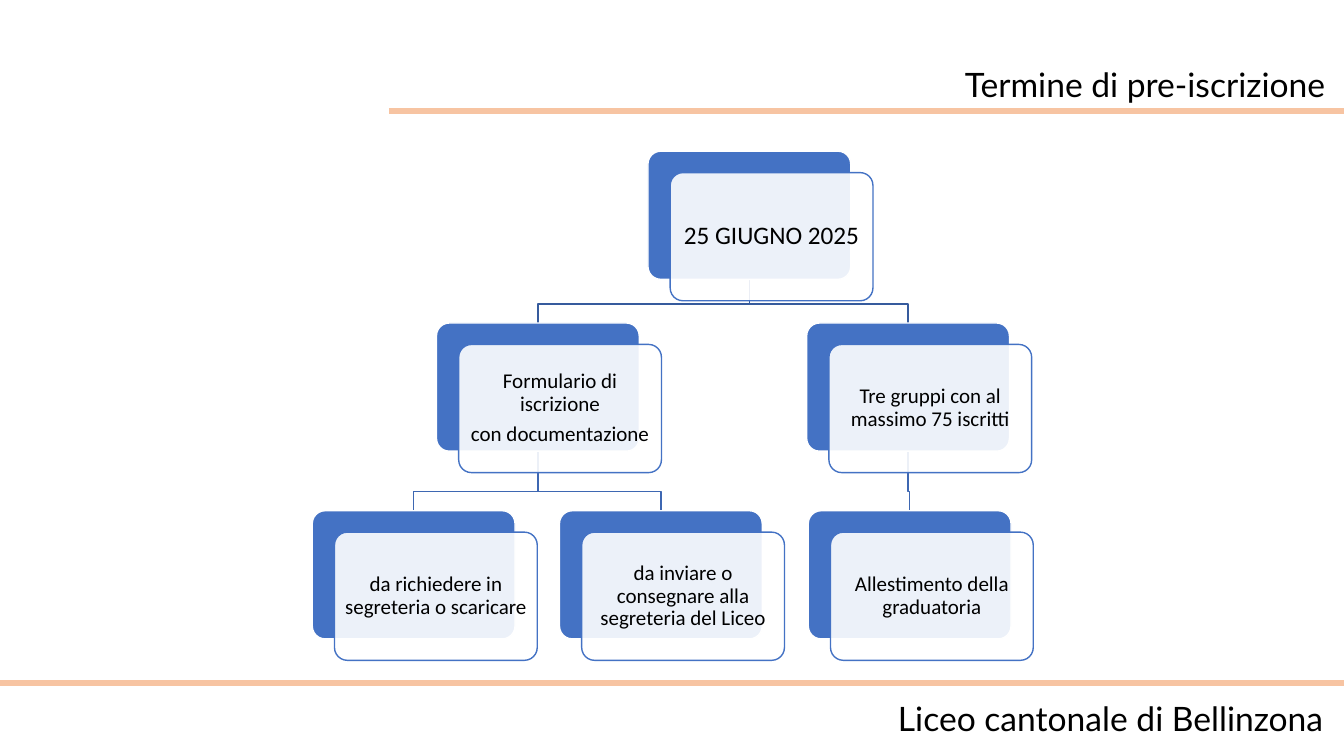
from dataclasses import dataclass
from typing import Optional

from lxml.etree import SubElement
from pptx import Presentation
from pptx.dml.color import RGBColor
from pptx.enum.shapes import MSO_CONNECTOR, MSO_SHAPE
from pptx.enum.text import MSO_ANCHOR, MSO_AUTO_SIZE, PP_ALIGN
from pptx.oxml.ns import qn
from pptx.util import Cm, Pt

BLACK = RGBColor(0x00, 0x00, 0x00)
WHITE = RGBColor(0xFF, 0xFF, 0xFF)
BLUE = RGBColor(0x44, 0x72, 0xC4)
UPPER_LINK = RGBColor(0x36, 0x5B, 0x9D)
LOWER_LINK = RGBColor(0x3E, 0x67, 0xB2)
PEACH = RGBColor(0xF7, 0xC4, 0xA2)

CARD_WIDTH, CARD_HEIGHT = 5.11, 3.23
FRONT_DX, FRONT_DY = 0.56, 0.54
LINK_BEND = 0.48
ROW_TOPS = (3.81, 8.14, 12.87)


@dataclass(frozen=True)
class Step:
    left: float
    row: int
    lines: tuple[str, ...]
    parent: Optional["Step"] = None
    size: float = 15

    @property
    def top(self) -> float:
        return ROW_TOPS[self.row]

    @property
    def center(self) -> float:
        return self.left + CARD_WIDTH / 2


DEADLINE = Step(16.33, 0, ("25 GIUGNO 2025",), size=18)
FORM = Step(11, 1, ("Formulario di iscrizione", "con documentazione"), DEADLINE)
GROUPS = Step(20.33, 1, ("Tre gruppi con al massimo 75 iscritti",), DEADLINE)
STEPS = (
    DEADLINE,
    FORM,
    Step(7.87, 2, ("da richiedere in segreteria o scaricare",), FORM),
    Step(14.1, 2, ("da inviare o consegnare alla segreteria del Liceo",), FORM),
    GROUPS,
    Step(20.37, 2, ("Allestimento della graduatoria",), GROUPS),
)


def apply(target, formats: dict) -> None:
    for name, value in formats.items():
        setattr(target, name, value)


def write(frame, lines: tuple[str, ...], paragraph_format: dict, font_format: dict) -> None:
    frame.text = "\n".join(lines)
    for paragraph in frame.paragraphs:
        apply(paragraph, {"line_spacing": 0.9, **paragraph_format})
        apply(paragraph.font, font_format)
        paragraph.font.color.rgb = BLACK


def write_heading(box, text: str, align: PP_ALIGN, place: dict) -> None:
    apply(box, {side: Cm(length) for side, length in place.items()})
    apply(box.text_frame, {"word_wrap": True, "auto_size": MSO_AUTO_SIZE.NONE,
                           "vertical_anchor": MSO_ANCHOR.BOTTOM})
    write(box.text_frame, (text,), {"alignment": align}, {"name": "Lato", "size": Pt(24)})


def draw_rule(slide, left: float, right: float, y: float) -> None:
    rule = slide.shapes.add_connector(MSO_CONNECTOR.STRAIGHT, Cm(left), Cm(y), Cm(right), Cm(y))
    rule.line.color.rgb = PEACH
    rule.line.width = Pt(4.25)
    SubElement(rule._element.spPr, qn("a:effectLst"))


def draw_link(slide, step: Step) -> None:
    start, end, bend = step.parent.center, step.center, step.top - LINK_BEND
    outline = slide.shapes.build_freeform(Cm(start), Cm(step.parent.top + CARD_HEIGHT))
    corners = ((start, bend), (end, bend), (end, step.top))
    outline.add_line_segments([(Cm(x), Cm(y)) for x, y in corners], close=False)
    link = outline.convert_to_shape()
    link.shadow.inherit = False
    link.fill.background()
    link.line.color.rgb = UPPER_LINK if step.row == 1 else LOWER_LINK
    link.line.width = Pt(1)


def draw_card(slide, left: float, top: float, fill: RGBColor, border: RGBColor):
    card = slide.shapes.add_shape(MSO_SHAPE.ROUNDED_RECTANGLE, Cm(left), Cm(top),
                                  Cm(CARD_WIDTH), Cm(CARD_HEIGHT))
    card.adjustments[0] = 0.1
    card.shadow.inherit = False
    card.fill.solid()
    card.fill.fore_color.rgb = fill
    card.line.color.rgb = border
    card.line.width = Pt(1)
    return card


def draw_step(slide, step: Step) -> None:
    draw_card(slide, step.left, step.top, BLUE, WHITE)
    front = draw_card(slide, step.left + FRONT_DX, step.top + FRONT_DY, WHITE, BLUE)
    color = front._element.spPr.find(qn("a:solidFill")).find(qn("a:srgbClr"))
    SubElement(color, qn("a:alpha"), val="90000")
    inset = Cm(step.size / 100)
    apply(front.text_frame, {"word_wrap": True, "vertical_anchor": MSO_ANCHOR.MIDDLE,
                             "margin_left": inset, "margin_right": inset,
                             "margin_top": inset, "margin_bottom": inset})
    write(front.text_frame, step.lines,
          {"alignment": PP_ALIGN.CENTER, "space_after": Pt(step.size * 0.35)},
          {"name": "Calibri", "size": Pt(step.size)})


def main() -> None:
    deck = Presentation()
    deck.slide_width, deck.slide_height = Cm(33.87), Cm(19.05)
    slide = deck.slides.add_slide(deck.slide_layouts[5])

    write_heading(slide.shapes.title, "Termine di pre-iscrizione", PP_ALIGN.RIGHT,
                  {"left": 10.69, "top": 0.97, "width": 22.96, "height": 1.8})
    draw_rule(slide, 9.8, 33.87, 2.8)
    school = slide.shapes.add_textbox(0, 0, 0, 0)
    write_heading(school, "Liceo cantonale di Bellinzona", PP_ALIGN.LEFT,
                  {"left": 22.38, "top": 16.94, "width": 11.84, "height": 1.8})
    draw_rule(slide, 0, 33.87, 17.2)

    for step in STEPS:
        if step.parent:
            draw_link(slide, step)
    for step in STEPS:
        draw_step(slide, step)
    deck.save("out.pptx")


if __name__ == "__main__":
    main()
